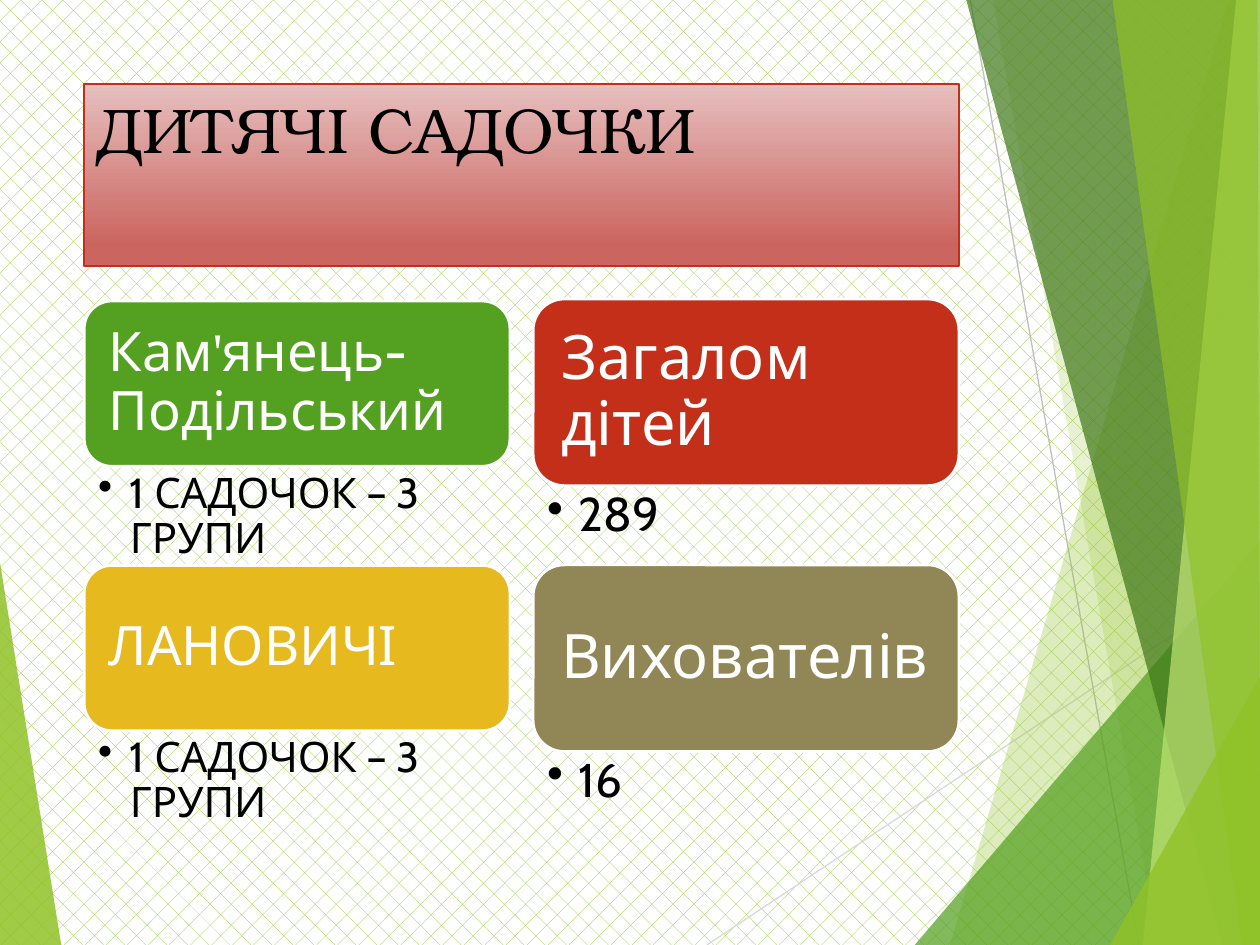
import lxml.etree
import pptx
import pptx.util
import pptx.oxml.ns
import pptx.dml.color
import pptx.enum.dml
import pptx.enum.shapes
import pptx.enum.text
from pptx.util import Cm

COLORS = {
    "lime": "90C226", "green": "54A021", "forest": "3F7819", "pale": "C0E474",
    "light_gray": "D9D9D9", "gray": "BFBFBF", "white": "FFFFFF", "black": "000000",
    "red": "C42F1A", "gold": "E6B91E", "olive": "918655",
    "title_top": "E6BFBE", "title_bottom": "CB6560",
}
WIDTH, HEIGHT = 25.4, 19.05
RIGHT = 25.43
FACETS = [
    ("lime", 85, [(-0.03, 11.15), (1.24, 19.08), (-0.03, HEIGHT)]),
    ("lime", 30, [(24.77, 0), (19.15, HEIGHT), (RIGHT, HEIGHT), (RIGHT, 0)]),
    ("lime", 20, [(20.02, 0), (23.34, HEIGHT), (RIGHT, HEIGHT), (RIGHT, 0)]),
    ("green", 72, [(18.44, HEIGHT), (WIDTH, 10.9), (RIGHT, HEIGHT)]),
    ("forest", 70, [(19.48, 0), (24.64, HEIGHT), (RIGHT, HEIGHT), (RIGHT, 0)]),
    ("pale", 70, [(24.92, 0), (23.04, HEIGHT), (RIGHT, HEIGHT), (WIDTH, 0)]),
    ("lime", 65, [(22.43, 0), (25.04, HEIGHT), (WIDTH, HEIGHT), (25.35, 0)]),
    ("lime", 80, [(22.38, HEIGHT), (RIGHT, 13.59), (RIGHT, HEIGHT)]),
]
RAYS = [
    ("light_gray", (14.25, HEIGHT), (RIGHT, 11.61)),
    ("gray", (19.56, 0), (22.96, HEIGHT)),
]


def rgb(name):
    return pptx.dml.color.RGBColor.from_string(COLORS[name])


def add_element(parent, tag, **attributes):
    lxml.etree.SubElement(parent, pptx.oxml.ns.qn(tag), attributes)


def format_run(run, font_name, size, color):
    run.font.name = font_name
    run.font.size = pptx.util.Pt(size)
    run.font.color.rgb = rgb(color)


def set_margins(text_frame, left, top, right, bottom):
    text_frame.word_wrap = True
    text_frame.margin_left, text_frame.margin_top = Cm(left), Cm(top)
    text_frame.margin_right, text_frame.margin_bottom = Cm(right), Cm(bottom)


def add_facet(slide, color, opacity, points):
    corners = [(Cm(x), Cm(y)) for x, y in points]
    builder = slide.shapes.build_freeform(*corners[0])
    builder.add_line_segments(corners[1:], close=True)
    shape = builder.convert_to_shape()
    shape.shadow.inherit = False
    shape.line.fill.background()
    shape.fill.solid()
    shape.fill.fore_color.rgb = rgb(color)
    color_element = shape._element.spPr.find(".//" + pptx.oxml.ns.qn("a:srgbClr"))
    add_element(color_element, "a:alpha", val=str(opacity * 1000))


def add_ray(slide, color, start, end):
    connector = slide.shapes.add_connector(
        pptx.enum.shapes.MSO_CONNECTOR.STRAIGHT, *map(Cm, start + end))
    connector.line.color.rgb = rgb(color)
    connector.line.width = pptx.util.Pt(0.75)
    add_element(connector._element.spPr, "a:effectLst")


def add_backdrop(slide):
    fill = slide.background.fill
    fill.patterned()
    fill.pattern = pptx.enum.dml.MSO_PATTERN.DIAGONAL_BRICK
    fill.fore_color.rgb = rgb("lime")
    fill.back_color.rgb = rgb("white")
    add_facet(slide, *FACETS[0])
    for ray in RAYS:
        add_ray(slide, *ray)
    for facet in FACETS[1:]:
        add_facet(slide, *facet)


def add_title(slide, left, top, width, height, text):
    shape = slide.shapes.add_shape(
        pptx.enum.shapes.MSO_SHAPE.RECTANGLE, *map(Cm, (left, top, width, height)))
    shape.shadow.inherit = False
    shape.fill.gradient()
    shape.fill.gradient_angle = 270
    stops = zip(shape.fill.gradient_stops, (0, 0.88), ("title_top", "title_bottom"))
    for stop, position, color in stops:
        stop.position = position
        stop.color.rgb = rgb(color)
    shape.line.color.rgb = rgb("red")
    shape.line.width = pptx.util.Pt(1)
    text_frame = shape.text_frame
    set_margins(text_frame, 0.25, 0.13, 0.25, 0.13)
    text_frame.vertical_anchor = pptx.enum.text.MSO_ANCHOR.TOP
    paragraph = text_frame.paragraphs[0]
    paragraph.text = text
    paragraph.alignment = pptx.enum.text.PP_ALIGN.LEFT
    format_run(paragraph.runs[0], "TeX Gyre Bonum", 36, "black")


def add_heading(slide, left, top, width, height, pieces, color, size, margin):
    shape = slide.shapes.add_shape(
        pptx.enum.shapes.MSO_SHAPE.ROUNDED_RECTANGLE, *map(Cm, (left, top, width, height)))
    shape.shadow.inherit = False
    shape.fill.solid()
    shape.fill.fore_color.rgb = rgb(color)
    shape.line.color.rgb = rgb("white")
    shape.line.width = pptx.util.Pt(1.5)
    text_frame = shape.text_frame
    set_margins(text_frame, margin, margin, margin, margin)
    text_frame.vertical_anchor = pptx.enum.text.MSO_ANCHOR.MIDDLE
    paragraph = text_frame.paragraphs[0]
    paragraph.alignment = pptx.enum.text.PP_ALIGN.LEFT
    paragraph.line_spacing = 0.9
    for piece in pieces:
        run = paragraph.add_run()
        run.text = piece
        format_run(run, "Times New Roman" if piece == "'" else "Cabin", size, "white")


def add_detail(slide, left, top, width, height, text, size, right_margin):
    shape = slide.shapes.add_textbox(*map(Cm, (left, top, width, height)))
    set_margins(shape.text_frame, 0.28, 0.11, right_margin, 0.11)
    paragraph = shape.text_frame.paragraphs[0]
    paragraph.text = text
    paragraph.level = 1
    paragraph.line_spacing = 0.9
    format_run(paragraph.runs[0], "Cabin", size, "black")
    properties = paragraph._p.get_or_add_pPr()
    properties.set("marL", str(Cm(0.64)))
    properties.set("indent", str(Cm(-0.64)))
    add_element(properties, "a:buChar", char="•")


def add_column(slide, left, top, width, heading_height, detail_height, cards,
               heading_size, detail_size, margin, right_margin):
    for index, (pieces, color, detail) in enumerate(cards):
        card_top = top + index * (heading_height + detail_height)
        add_heading(slide, left, card_top, width, heading_height,
                    pieces, color, heading_size, margin)
        add_detail(slide, left, card_top + heading_height, width, detail_height,
                   detail, detail_size, right_margin)


def main():
    presentation = pptx.Presentation()
    presentation.slide_width, presentation.slide_height = Cm(WIDTH), Cm(HEIGHT)
    slide = presentation.slides.add_slide(presentation.slide_layouts[6])
    add_backdrop(slide)
    add_title(slide, 1.7, 1.7, 17.63, 3.66, "ДИТЯЧІ САДОЧКИ")
    add_column(slide, 1.7, 6.07, 8.58, 3.33, 2, [
        (("Кам", "'", "янець-Подільський"), "green", "1 САДОЧОК – 3 ГРУПИ"),
        (("ЛАНОВИЧІ",), "gold", "1 САДОЧОК – 3 ГРУПИ"),
    ], 31, 24, 0.33, 0.61)
    add_column(slide, 10.75, 6.03, 8.58, 3.76, 1.6, [
        (("Загалом дітей",), "red", "289"),
        (("Вихователів",), "olive", "16"),
    ], 35, 27, 0.38, 0.69)
    presentation.save("out.pptx")


if __name__ == "__main__":
    main()
